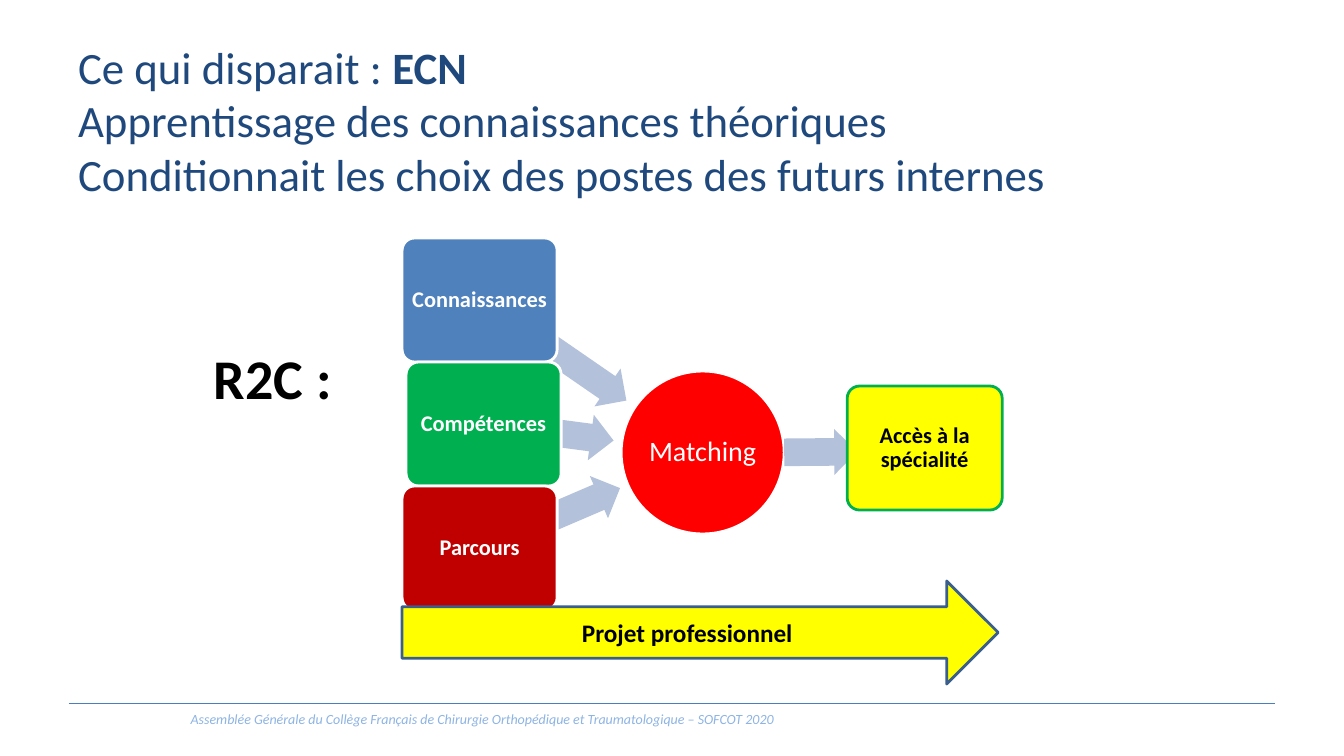
from pptx import Presentation, util as u
from pptx.dml.color import RGBColor
from pptx.enum import shapes, text
from pptx.oxml.ns import qn

PX_PER_INCH = 100.8
COLORS = {
    "navy": "1F497D", "blue": "4F81BD", "green": "00B050", "dark_red": "C00000",
    "red": "FF0000", "yellow": "FFFF00", "pale": "B3C1DB", "outline": "3A5F8C",
    "rule": "4B7EBC", "footer": "8EB4E3", "white": "FFFFFF", "black": "000000",
}
BOX_SIZE = (155, 124)
ARROW_HEIGHT = 46


def px(length):
    return u.Emu(round(length * 914400 / PX_PER_INCH))


def rgb(name):
    return RGBColor.from_string(COLORS[name])


def style_font(font, size, color, **formats):
    font.color.rgb = rgb(color)
    for name, value in {"name": "Calibri", "size": u.Pt(size), **formats}.items():
        setattr(font, name, value)


def write(frame, words, size, color, align=text.PP_ALIGN.CENTER, spacing=1.0, **formats):
    paragraph = frame.paragraphs[0]
    paragraph.alignment = align
    paragraph.line_spacing = spacing
    run = paragraph.add_run()
    run.text = words
    style_font(run.font, size, color, **formats)


def add_title(slide, lines):
    title = slide.shapes.title
    title.left, title.top, title.width, title.height = map(px, (68, 57, 1210, 126))
    frame = title.text_frame
    frame.auto_size = text.MSO_AUTO_SIZE.NONE
    frame.vertical_anchor = text.MSO_ANCHOR.MIDDLE
    paragraph = frame.paragraphs[0]
    paragraph.alignment = text.PP_ALIGN.LEFT
    for index, pieces in enumerate(lines):
        if index:
            paragraph.add_line_break()
        for words, bold in pieces:
            run = paragraph.add_run()
            run.text = words
            style_font(run.font, 32, "navy", bold=bold)


def add_label(slide, box, words, size, color, wrap=True, **formats):
    frame = slide.shapes.add_textbox(*map(px, box)).text_frame
    frame.word_wrap = wrap
    write(frame, words, size, color, **formats)


def add_figure(slide, kind, box, fill, line=None, adjust=(), rotation=0):
    figure = slide.shapes.add_shape(kind, *map(px, box))
    figure.shadow.inherit = False
    figure.rotation = rotation
    figure.fill.solid()
    figure.fill.fore_color.rgb = rgb(fill)
    if line:
        figure.line.color.rgb = rgb(line)
        figure.line.width = u.Pt(2)
    else:
        figure.line.fill.background()
    for index, value in enumerate(adjust):
        figure.adjustments[index] = value
    return figure


def fill_in(figure, words, size, color, inset=None, **formats):
    frame = figure.text_frame
    frame.word_wrap = True
    frame.vertical_anchor = text.MSO_ANCHOR.MIDDLE
    if inset is not None:
        for side in ("left", "top", "right", "bottom"):
            setattr(frame, f"margin_{side}", px(inset))
    write(frame, words, size, color, **formats)


def add_flow_arrow(slide, left, top, width, rotation):
    add_figure(slide, shapes.MSO_SHAPE.LEFT_ARROW, (left, top, width, ARROW_HEIGHT),
               "pale", adjust=(0.6, 0.5), rotation=rotation)


def add_step(slide, left, top, words, fill, line="white", color="white"):
    step = add_figure(slide, shapes.MSO_SHAPE.ROUNDED_RECTANGLE, (left, top, *BOX_SIZE),
                      fill, line, adjust=(0.1,))
    fill_in(step, words, 16, color, inset=3, spacing=0.9, bold=True)


def add_rule(slide, left, right, y):
    rule = slide.shapes.add_connector(shapes.MSO_CONNECTOR.STRAIGHT,
                                      *map(px, (left, y, right, y)))
    rule.line.color.rgb = rgb("rule")
    rule.line.width = u.Pt(0.75)
    properties = rule._element.spPr
    properties.append(properties.makeelement(qn("a:effectLst"), {}))


def main():
    deck = Presentation()
    deck.slide_width, deck.slide_height = u.Inches(13.33), u.Inches(7.5)
    slide = deck.slides.add_slide(deck.slide_layouts[5])

    # Footer
    add_rule(slide, 69, 1275, 704)
    add_label(slide, (69, 706, 826, 27),
              "Assemblée Générale du Collège Français de Chirurgie Orthopédique "
              "et Traumatologique – SOFCOT 2020", 10, "footer", italic=True)

    # Title
    add_title(slide, [
        [("Ce qui disparait : ", False), ("ECN", True)],
        [("Apprentissage des connaissances théoriques", False)],
        [("Conditionnait les choix des postes des futurs internes", False)],
    ])

    # Matching hub
    matching = add_figure(slide, shapes.MSO_SHAPE.OVAL, (621, 371, 163, 163), "red", "white")
    fill_in(matching, "Matching", 20, "white", inset=1, spacing=0.9)

    # Three criteria, each with its arrow to the hub
    criteria = [
        ("Connaissances", "blue", 402, (464, 327, 178, 214.6)),
        ("Compétences", "green", 406, (483, 409, 131, 187.5)),
        ("Parcours", "dark_red", 402, (474, 495, 152, 156.8)),
    ]
    for row, (words, fill, left, arrow) in enumerate(criteria):
        add_flow_arrow(slide, *arrow)
        add_step(slide, left, 238 + row * BOX_SIZE[1], words, fill)

    # Outcome
    add_flow_arrow(slide, 784, 429, 73, 179.5)
    add_step(slide, 847, 386, "Accès à la spécialité", "yellow", "green", "black")

    # Project arrow and side label
    project = add_figure(slide, shapes.MSO_SHAPE.RIGHT_ARROW, (402, 581, 596, 103),
                         "yellow", "outline")
    fill_in(project, "Projet professionnel", 18, "black", bold=True)
    add_label(slide, (204, 339, 139, 78), "R2C :", 40, "black", wrap=False,
              align=text.PP_ALIGN.LEFT, bold=True)

    deck.save("out.pptx")


if __name__ == "__main__":
    main()
